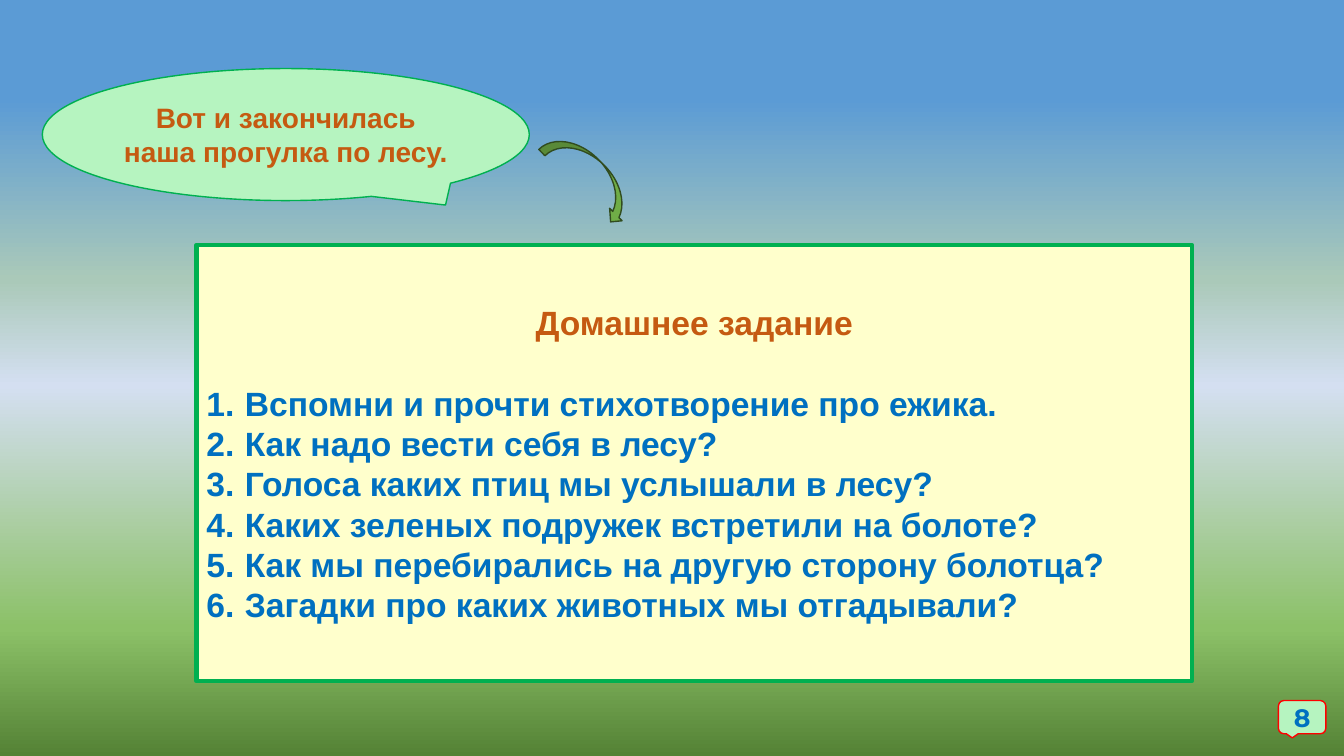
from dataclasses import dataclass

from lxml.etree import SubElement as Sub
from pptx import Presentation
from pptx.dml.color import RGBColor
from pptx.enum.shapes import MSO_SHAPE as Kind
from pptx.enum.text import MSO_ANCHOR as Anchor, PP_ALIGN as Align
from pptx.oxml.ns import qn
from pptx.shapes.autoshape import Shape
from pptx.slide import Slide
from pptx.util import Inches, Pt

GREEN, MINT, CREAM = "00B050", "B6F4C0", "FFFFCC"
RUST, BLUE, RED = "C55A11", "0070C0", "FF0000"
LEAF, MOSS = "70AD47", "314C1F"
SKY = [(13, "5B9BD5"), (37, "AAC9B9"), (51, "D4DFF1"), (83, "8CC168"), (100, "548235")]
TASKS = [
    "Вспомни и прочти стихотворение про ежика.",
    "Как надо вести себя в лесу?",
    "Голоса каких птиц мы услышали в лесу?",
    "Каких зеленых подружек встретили на болоте?",
    "Как мы перебирались на другую сторону болотца?",
    "Загадки про каких животных мы отгадывали?",
]


@dataclass
class Panel:
    kind: Kind
    box: tuple[float, float, float, float]
    fill: str
    line: str
    width: float = 1
    text: str = ""
    size: int = 20
    color: str = RUST
    font: str = "Arial"
    bends: tuple[float, ...] = ()


def tint(code: str) -> RGBColor:
    return RGBColor.from_string(code)


def style(para, size: int, color: str, font: str = "Arial") -> None:
    for run in para.runs:
        run.font.size = Pt(size)
        run.font.name = font
        run.font.bold = True
        run.font.color.rgb = tint(color)


def draw(slide: Slide, panel: Panel) -> Shape:
    shape = slide.shapes.add_shape(panel.kind, *map(Inches, panel.box))
    shape.shadow.inherit = False
    shape.fill.solid()
    shape.fill.fore_color.rgb = tint(panel.fill)
    shape.line.color.rgb = tint(panel.line)
    shape.line.width = Pt(panel.width)
    for index, bend in enumerate(panel.bends):
        shape.adjustments[index] = bend
    if panel.text:
        frame = shape.text_frame
        frame.word_wrap = True
        frame.vertical_anchor = Anchor.MIDDLE
        frame.text = panel.text
        para = frame.paragraphs[0]
        para.alignment = Align.CENTER
        style(para, panel.size, panel.color, panel.font)
    return shape


def paint(slide: Slide) -> None:
    fill = slide.background.fill
    fill.gradient()
    fill.gradient_angle = 270
    stops = next(slide.element.iter(qn("a:gsLst")))
    for stop in list(stops):
        stops.remove(stop)
    for place, code in SKY:
        stop = Sub(stops, qn("a:gs"), pos=str(place * 1000))
        Sub(stop, qn("a:srgbClr"), val=code)


def number(shape: Shape, tasks: list[str]) -> None:
    frame = shape.text_frame
    frame.paragraphs[0].space_after = Pt(28.8)
    for task in tasks:
        para = frame.add_paragraph()
        para.text = task
        para.alignment = Align.LEFT
        props = para._p.get_or_add_pPr()
        props.set("marL", str(Inches(0.38)))
        props.set("indent", str(-Inches(0.38)))
        Sub(props, qn("a:buFont"), typeface="+mj-lt")
        Sub(props, qn("a:buAutoNum"), type="arabicPeriod")
        style(para, 24, BLUE)


def main() -> None:
    deck = Presentation()
    deck.slide_width, deck.slide_height = Inches(13.33), Inches(7.5)
    slide = deck.slides.add_slide(deck.slide_layouts[6])
    paint(slide)
    draw(slide, Panel(Kind.OVAL_CALLOUT, (0.42, 0.68, 4.83, 1.31), MINT, GREEN,
                      text="Вот и закончилась наша прогулка по лесу.",
                      bends=(0.328, 0.534)))
    board = draw(slide, Panel(Kind.RECTANGLE, (1.95, 2.43, 9.87, 4.33), CREAM, GREEN, 3,
                              "Домашнее задание", 24))
    number(board, TASKS)
    arrow = draw(slide, Panel(Kind.CURVED_RIGHT_ARROW, (5.68, 1.2, 0.35, 1.1), LEAF, MOSS))
    arrow.rotation = 315.2
    arrow.element.spPr.find(qn("a:xfrm")).set("flipH", "1")
    draw(slide, Panel(Kind.ROUNDED_RECTANGULAR_CALLOUT, (12.68, 6.95, 0.47, 0.33), MINT, RED,
                      text="8", size=18, color=BLUE, font="Montserrat"))
    deck.save("out.pptx")


if __name__ == "__main__":
    main()
